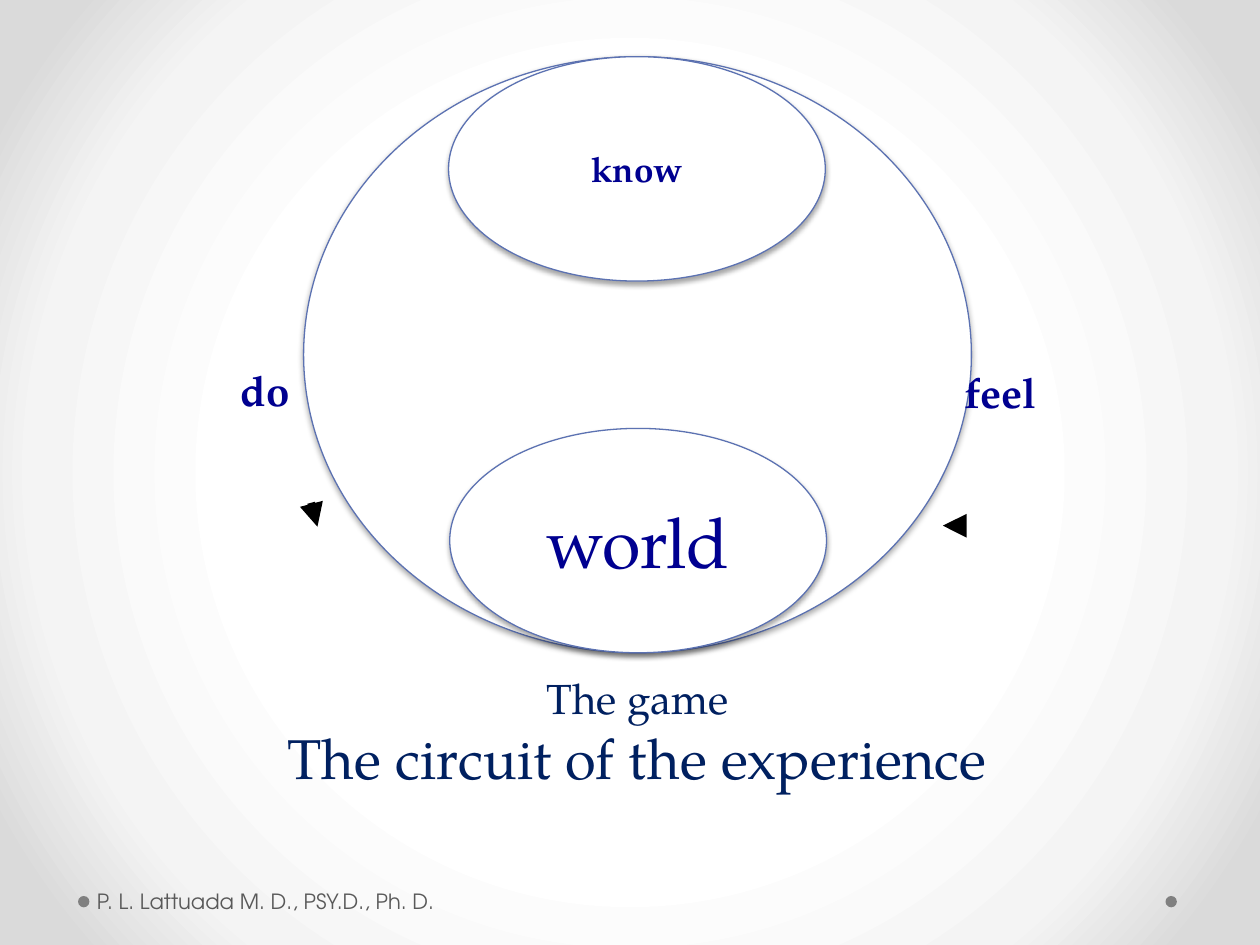
from dataclasses import dataclass
from typing import Any

from pptx import Presentation as Deck
from pptx.dml.color import RGBColor as Rgb
from pptx.enum.shapes import MSO_CONNECTOR as Wire, MSO_SHAPE as Form
from pptx.enum.text import MSO_ANCHOR as Anchor, MSO_AUTO_SIZE as Auto, PP_ALIGN as Align
from pptx.oxml import parse_xml as to_xml
from pptx.oxml.ns import nsdecls as names, qn
from pptx.util import Pt

HUES = {
    "white": "FFFFFF", "pale": "F4F4F4", "edge": "DADADA", "dot": "808080",
    "rim": "5C72B2", "ink": "000090", "navy": "002060", "gray": "595959",
    "black": "000000",
}
SERIF, SANS = "TeX Gyre Pagella", "TeX Gyre Adventor"
NS = names("a")


@dataclass
class Run:
    text: str
    size: float
    hue: str = "ink"
    bold: bool = False
    font: str = SERIF


@dataclass
class Oval:
    left: float
    top: float
    wide: float
    high: float
    run: Run | None = None


@dataclass
class Label:
    left: float
    top: float
    wide: float
    high: float
    run: Run
    form: dict[str, Any]


@dataclass
class Arrow:
    start: tuple[float, float]
    end: tuple[float, float]


DOTS = [Oval(666, 512, 6.5, 6.5), Oval(44.6, 512, 6.5, 6.5)]
OVALS = [
    Oval(173.5, 32.4, 381.6, 340.6),
    Oval(257, 244.8, 215.3, 128.2, Run("world", 40)),
    Oval(256.3, 32.4, 215.3, 128.2, Run("know", 20, bold=True)),
]
LABELS = [
    Label(130.3, 204.5, 42.5, 36, Run("do", 24, bold=True), {"word_wrap": False}),
    Label(544.3, 205.9, 80, 36, Run("feel", 24, bold=True), {"word_wrap": True}),
    Label(51.8, 500.4, 224, 28.8,
          Run("P. L. Lattuada M. D., PSY.D., Ph. D.", 12, "gray", font=SANS),
          {"word_wrap": True, "vertical_anchor": Anchor.MIDDLE, "margin_left": Pt(3.6)}),
]
ARROWS = [Arrow((177.8, 287.3), (181.4, 301)), Arrow((550.8, 300.4), (538.8, 300.4))]
LINES = [Run("The game", 24, "navy"), Run("The circuit of the experience", 32, "navy")]


def tint(name: str) -> Rgb:
    return Rgb.from_string(HUES[name])


def dress(item: Any, form: dict[str, Any]) -> None:
    for key, value in form.items():
        setattr(item, key, value)


def place(item: Any, left: float, top: float, wide: float, high: float) -> None:
    dress(item, {"left": Pt(left), "top": Pt(top), "width": Pt(wide), "height": Pt(high)})


def write(para: Any, run: Run, align: Any = None) -> None:
    para.alignment = align
    part = para.add_run()
    part.text = run.text
    dress(part.font, {"size": Pt(run.size), "bold": run.bold, "name": run.font})
    part.font.color.rgb = tint(run.hue)


def paint(slide: Any) -> None:
    fill = slide.background.fill
    fill.solid()
    fill.fore_color.rgb = tint("white")
    old = slide.element.find(".//" + qn("a:solidFill"))
    stops = "".join(
        f'<a:gs pos="{spot * 1000}"><a:srgbClr val="{HUES[hue]}"/></a:gs>'
        for spot, hue in ((50, "white"), (76, "pale"), (92, "edge"))
    )
    sides = " ".join(f'{side}="50000"' for side in "ltrb")
    old.getparent().replace(old, to_xml(
        f'<a:gradFill {NS} rotWithShape="1"><a:gsLst>{stops}</a:gsLst>'
        f'<a:path path="circle"><a:fillToRect {sides}/></a:path></a:gradFill>'
    ))


def ring(slide: Any, oval: Oval, hue: str) -> Any:
    box = Pt(oval.left), Pt(oval.top), Pt(oval.wide), Pt(oval.high)
    shape = slide.shapes.add_shape(Form.OVAL, *box)
    shape.fill.solid()
    shape.fill.fore_color.rgb = tint(hue)
    shape.line.fill.background()
    shape.shadow.inherit = False
    return shape


def draw_oval(slide: Any, oval: Oval) -> None:
    shape = ring(slide, oval, "white")
    shape.line.color.rgb = tint("rim")
    shape.line.width = Pt(0.75)
    shape.element.spPr.find(qn("a:effectLst")).append(to_xml(
        f'<a:outerShdw {NS} blurRad="{Pt(3.1)}" dist="{Pt(1.8)}" dir="5400000" '
        f'rotWithShape="0"><a:srgbClr val="{HUES["black"]}">'
        '<a:alpha val="35000"/></a:srgbClr></a:outerShdw>'
    ))
    if oval.run:
        shape.text_frame.vertical_anchor = Anchor.MIDDLE
        write(shape.text_frame.paragraphs[0], oval.run, Align.CENTER)


def draw_label(slide: Any, label: Label) -> None:
    box = Pt(label.left), Pt(label.top), Pt(label.wide), Pt(label.high)
    frame = slide.shapes.add_textbox(*box).text_frame
    dress(frame, label.form)
    write(frame.paragraphs[0], label.run)


def draw_arrow(slide: Any, arrow: Arrow) -> None:
    ends = [Pt(spot) for spot in arrow.start + arrow.end]
    wire = slide.shapes.add_connector(Wire.STRAIGHT, *ends)
    wire.line.color.rgb = tint("black")
    wire.line.width = Pt(4.5)
    wire.line._get_or_add_ln().append(to_xml(f'<a:tailEnd {NS} type="triangle"/>'))
    wire.element.spPr.append(to_xml(f"<a:effectLst {NS}/>"))


def draw_title(slide: Any) -> None:
    title = slide.shapes.title
    place(title, -28.8, 380.9, 786.2, 74.9)
    frame = title.text_frame
    dress(frame, {"word_wrap": True, "vertical_anchor": Anchor.TOP, "auto_size": Auto.NONE})
    paras = [frame.paragraphs[0], frame.add_paragraph()]
    for para, run in zip(paras, LINES):
        write(para, run, Align.CENTER)


def main() -> None:
    deck = Deck()
    dress(deck, {"slide_width": Pt(720), "slide_height": Pt(540)})
    slide = deck.slides.add_slide(deck.slide_layouts[5])
    paint(slide)
    for dot in DOTS:
        ring(slide, dot, "dot")
    for oval in OVALS:
        draw_oval(slide, oval)
    for label in LABELS:
        draw_label(slide, label)
    for arrow in ARROWS:
        draw_arrow(slide, arrow)
    draw_title(slide)
    deck.save("out.pptx")


if __name__ == "__main__":
    main()
